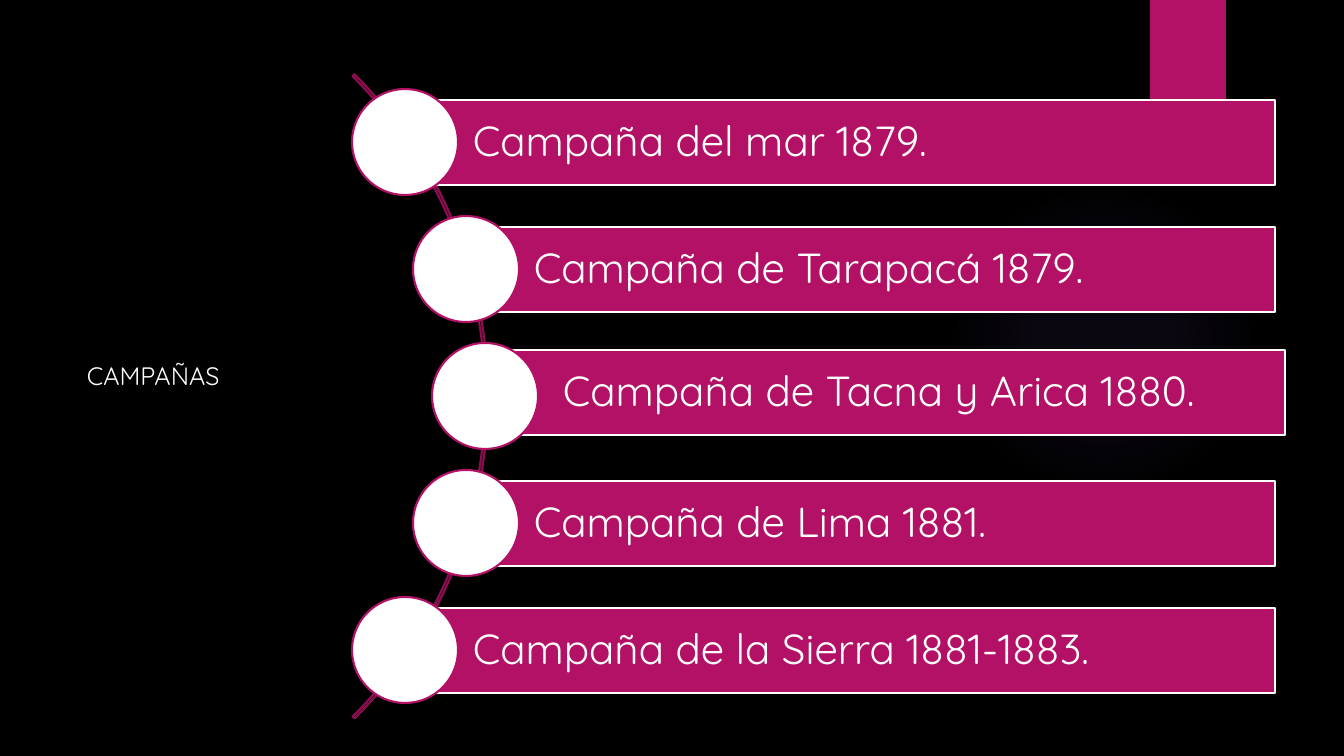
"""Build a slide listing five campaigns along a curved timeline."""
from lxml.etree import SubElement
from pptx import Presentation
from pptx.dml.color import RGBColor
from pptx.enum.shapes import MSO_SHAPE
from pptx.enum.text import MSO_ANCHOR, PP_ALIGN
from pptx.oxml.ns import qn
from pptx.util import Emu, Pt

THEME = {
    "background": "000000", "accent": "B31166", "arc": "8F0E52",
    "light": "FFFFFF", "glow": "9B6BF2", "font": "Quicksand",
    "title": 18, "campaign": 30, "outline": 1.5,
}
EMU_PER_INCH, PX_PER_INCH = 914400, 100.8


def px(length):
    return Emu(round(length * EMU_PER_INCH / PX_PER_INCH))


def add_part(kind, left, top, width, height, fill=None, line=None):
    part = slide.shapes.add_shape(kind, px(left), px(top), px(width), px(height))
    part.shadow.inherit = False
    if fill:
        part.fill.solid()
        part.fill.fore_color.rgb = RGBColor.from_string(THEME[fill])
    else:
        part.fill.background()
    if line:
        part.line.color.rgb = RGBColor.from_string(THEME[line])
        part.line.width = Pt(THEME["outline"])
    else:
        part.line.fill.background()
    return part


deck = Presentation()
deck.slide_width, deck.slide_height = px(1344), px(756)
slide = deck.slides.add_slide(deck.slide_layouts[6])
slide.background.fill.solid()
slide.background.fill.fore_color.rgb = RGBColor.from_string(THEME["background"])

glow = add_part(MSO_SHAPE.OVAL, 949, 184, 310, 310)
glow.fill.gradient()
gradient = glow.fill._xPr.find(qn("a:gradFill"))
for child in list(gradient):
    gradient.remove(child)
stops = SubElement(gradient, qn("a:gsLst"))
for position, opacity in ((0, 7), (36, 6), (69, 0)):
    stop = SubElement(stops, qn("a:gs"), pos=str(position * 1000))
    color = SubElement(stop, qn("a:srgbClr"), val=THEME["glow"])
    SubElement(color, qn("a:alpha"), val=str(opacity * 1000))
radial = SubElement(gradient, qn("a:path"), path="circle")
SubElement(radial, qn("a:fillToRect"), l="50000", t="50000", r="50000", b="50000")

add_part(MSO_SHAPE.RECTANGLE, 1150, 0, 76, 126, "accent")

arc = add_part(MSO_SHAPE.BLOCK_ARC, -423, -59, 911, 911, line="arc")
for index, adjustment in enumerate((189, 27, 0.003)):
    arc.adjustments[index] = adjustment

CIRCLE, ROW_STEP, BAR_HEIGHT, BAR_RIGHT = 106, 127, 85, 1275
campaigns = (
    ("Campaña del mar 1879.", 352, 0, 0),
    ("Campaña de Tarapacá 1879.", 413, 0, 0),
    ("Campaña de Tacna y Arica 1880.", 432, 10, -4),
    ("Campaña de Lima 1881.", 413, 0, 0),
    ("Campaña de la Sierra 1881-1883.", 352, 0, 0),
)
for row, (campaign, circle_left, shift_x, shift_y) in enumerate(campaigns):
    circle_top = 89 + row * ROW_STEP
    bar_left = circle_left + CIRCLE // 2
    bar = add_part(MSO_SHAPE.RECTANGLE, bar_left + shift_x, circle_top + 11 + shift_y,
                   BAR_RIGHT - bar_left, BAR_HEIGHT, "accent", "light")
    frame = bar.text_frame
    frame.word_wrap = True
    frame.vertical_anchor = MSO_ANCHOR.MIDDLE
    frame.margin_left = px(68)
    frame.margin_top = frame.margin_right = frame.margin_bottom = px(8)
    paragraph = frame.paragraphs[0]
    paragraph.alignment = PP_ALIGN.LEFT
    paragraph.line_spacing = 0.9
    run = paragraph.add_run()
    run.text = campaign
    run.font.name = THEME["font"]
    run.font.size = Pt(THEME["campaign"])
    run.font.color.rgb = RGBColor.from_string(THEME["light"])
    add_part(MSO_SHAPE.OVAL, circle_left, circle_top, CIRCLE, CIRCLE, "light", "accent")

heading = slide.shapes.add_textbox(px(77), px(355), px(327), px(40))
heading.text_frame.word_wrap = True
heading_run = heading.text_frame.paragraphs[0].add_run()
heading_run.text = "CAMPAÑAS"
heading_run.font.name = THEME["font"]
heading_run.font.size = Pt(THEME["title"])
heading_run.font.color.rgb = RGBColor.from_string(THEME["light"])

deck.save("out.pptx")
